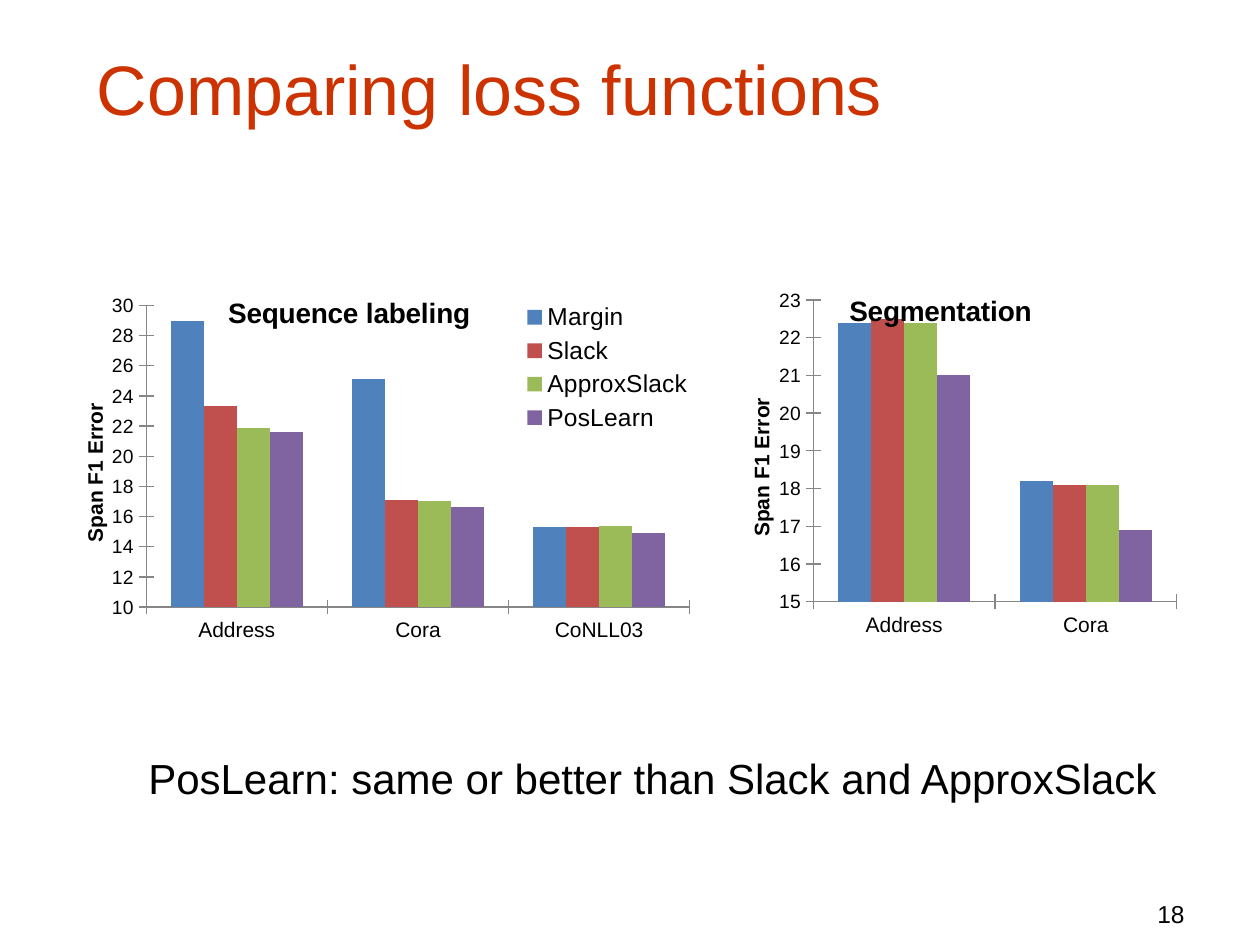
import pptx
import pptx.chart.data
import pptx.dml.color
import pptx.enum.chart
import pptx.enum.text
import pptx.oxml
import pptx.oxml.ns
import pptx.util
from pptx.util import Cm

BLACK = pptx.dml.color.RGBColor(0x00, 0x00, 0x00)
RED = pptx.dml.color.RGBColor(0xCC, 0x33, 0x00)
GREY = pptx.dml.color.RGBColor(0x86, 0x86, 0x86)
SERIES_COLORS = [
    pptx.dml.color.RGBColor(0x4F, 0x81, 0xBD),
    pptx.dml.color.RGBColor(0xC0, 0x50, 0x4D),
    pptx.dml.color.RGBColor(0x9B, 0xBB, 0x59),
    pptx.dml.color.RGBColor(0x80, 0x64, 0xA2),
]


def set_font(font, size, color=BLACK, bold=False):
    font.name = "Arial"
    font.size = pptx.util.Pt(size)
    font.color.rgb = color
    font.bold = bold


def set_layout(element, x, y, w=None, h=None):
    """Place a chart part by fractions of the chart area."""
    for old in element.xpath("c:layout"):
        element.remove(old)
    target = '<c:layoutTarget val="inner"/>' if element.xpath("self::c:plotArea") else ""
    size = f'<c:w val="{w}"/><c:h val="{h}"/>' if w else ""
    layout = pptx.oxml.parse_xml(
        f'<c:layout {pptx.oxml.ns.nsdecls("c")}><c:manualLayout>{target}'
        f'<c:xMode val="edge"/><c:yMode val="edge"/><c:x val="{x}"/><c:y val="{y}"/>'
        f'{size}</c:manualLayout></c:layout>')
    element.insert(len(element.xpath("c:tx | c:legendPos")), layout)


prs = pptx.Presentation()
prs.slide_width, prs.slide_height = Cm(25.4), Cm(19.05)
s = prs.slides.add_slide(prs.slide_layouts[6])

# Title, conclusion and slide number
ANCHOR = pptx.enum.text.MSO_ANCHOR
ALIGN = pptx.enum.text.PP_ALIGN
texts = [
    ("Comparing loss functions", (1.7, 0.84, 22.7, 1.9), 40, RED, ANCHOR.BOTTOM, ALIGN.LEFT, True),
    ("PosLearn: same or better than Slack and ApproxSlack",
     (2.74, 15.04, 21.06, 1.27), 24, BLACK, ANCHOR.TOP, ALIGN.LEFT, False),
    ("18", (18.85, 17.58, 5.28, 1.27), 14, BLACK, ANCHOR.BOTTOM, ALIGN.RIGHT, True),
]
for text, box, size, color, anchor, align, wrap in texts:
    tf = s.shapes.add_textbox(*map(Cm, box)).text_frame
    tf.word_wrap = wrap
    tf.vertical_anchor = anchor
    p = tf.paragraphs[0]
    p.text = text
    p.alignment = align
    set_font(p.font, size, color)

# Charts: title, box, categories, series, value axis (min, max, step),
# plot left and width, title position, axis title left, legend shown
charts = [
    ("Sequence labeling", (1.45, 5.77, 12.7, 7.62), ["Address", "Cora", "CoNLL03"],
     [("Margin", (29, 25.1, 15.3)), ("Slack", (23.3, 17.1, 15.3)),
      ("ApproxSlack", (21.9, 17, 15.4)), ("PosLearn", (21.6, 16.6, 14.9))],
     (10, 30, 2), (0.118, 0.863), (0.24, 0.01), 0.01, True),
    ("Segmentation", (14.83, 5.66, 9.12, 7.62), ["Address", "Cora"],
     [("Series 1", (22.4, 18.2)), ("Series 2", (22.5, 18.1)),
      ("Series 3", (22.4, 18.1)), ("Series 4", (21, 16.9))],
     (15, 23, 1), (0.172, 0.803), (0.24, 0.02), 0.02, False),
]
for title, box, cats, series, scale, plot_x, title_at, axis_title_x, legend in charts:
    data = pptx.chart.data.CategoryChartData()
    data.categories = cats
    for name, values in series:
        data.add_series(name, values)
    chart = s.shapes.add_chart(
        pptx.enum.chart.XL_CHART_TYPE.COLUMN_CLUSTERED, *map(Cm, box), data).chart
    set_font(chart.font, 10)
    root = chart.element

    # Columns
    plot = chart.plots[0]
    plot.vary_by_categories = False
    plot.gap_width, plot.overlap = 150, 0
    for ser, color in zip(plot.series, SERIES_COLORS):
        ser.format.fill.solid()
        ser.format.fill.fore_color.rgb = color
    set_layout(root.xpath("c:chart/c:plotArea")[0], plot_x[0], 0.051, plot_x[1], 0.798)

    # Axes
    for axis, size in ((chart.category_axis, 12), (chart.value_axis, 11)):
        axis.has_major_gridlines = False
        axis.major_tick_mark = pptx.enum.chart.XL_TICK_MARK.CROSS
        axis.minor_tick_mark = pptx.enum.chart.XL_TICK_MARK.NONE
        axis.format.line.color.rgb = GREY
        axis.format.line.width = pptx.util.Pt(0.75)
        set_font(axis.tick_labels.font, size)
    axis = chart.value_axis
    axis.minimum_scale, axis.maximum_scale, axis.major_unit = scale
    axis.tick_labels.number_format = "General"
    axis.tick_labels.number_format_is_linked = False

    # Chart title and axis title
    chart.has_title = True
    for holder, text, size in ((chart.chart_title, title, 16),
                               (axis.axis_title, "Span F1 Error", 12)):
        p = holder.text_frame.paragraphs[0]
        p.text = text
        set_font(p.font, size, bold=True)
        set_font(p.runs[0].font, size, bold=True)
    chart_title = root.xpath("c:chart/c:title")[0]
    set_layout(chart_title, *title_at)
    for overlay in chart_title.xpath("c:overlay"):
        overlay.set("val", "1")
    axis_title = root.xpath(".//c:valAx/c:title")[0]
    set_layout(axis_title, axis_title_x, 0.3)
    body = axis_title.xpath(".//a:bodyPr")[0]
    body.set("rot", "-5400000")
    body.set("vert", "horz")

    # Legend
    chart.has_legend = legend
    if legend:
        chart.legend.position = pptx.enum.chart.XL_LEGEND_POSITION.RIGHT
        chart.legend.include_in_layout = False
        set_font(chart.legend.font, 14)
        set_layout(root.xpath("c:chart/c:legend")[0], 0.71, 0.03, 0.28, 0.37)

prs.save("out.pptx")
